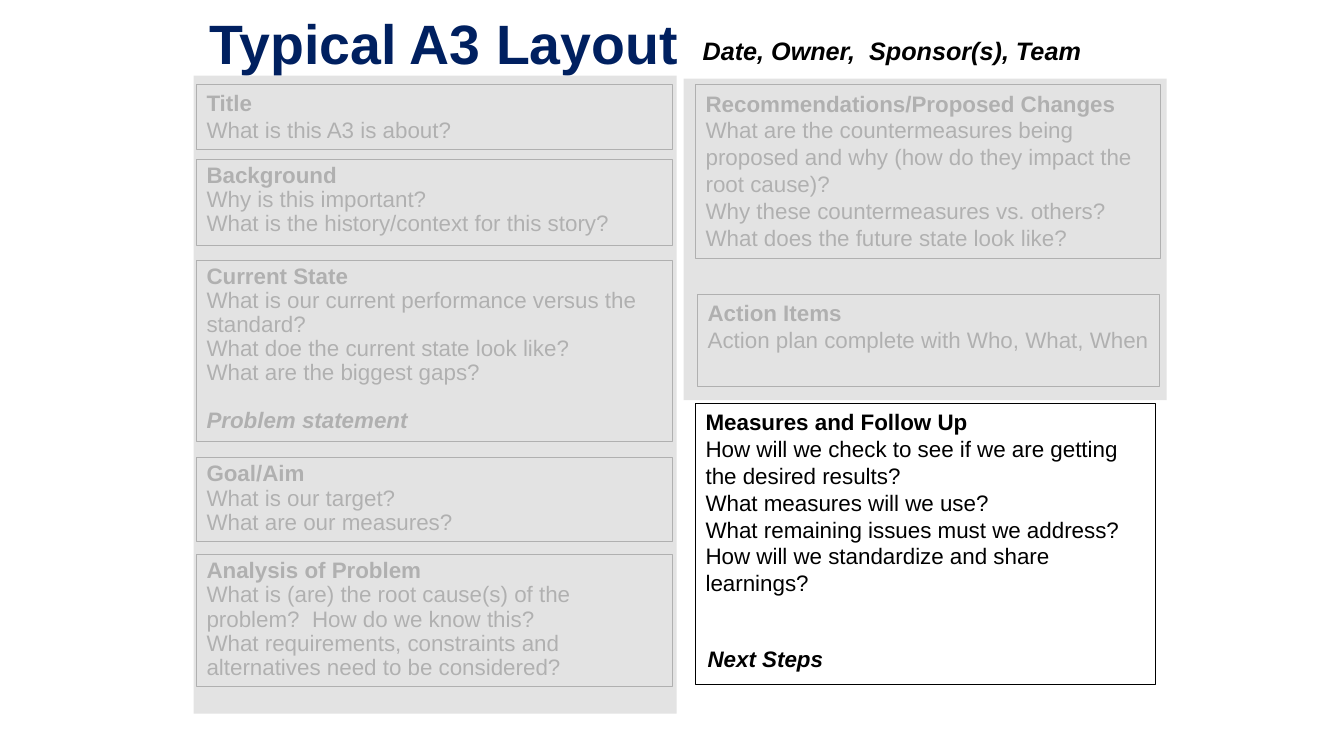
from dataclasses import dataclass

from lxml.etree import SubElement
from pptx import Presentation
from pptx.dml.color import RGBColor
from pptx.enum.shapes import MSO_SHAPE
from pptx.enum.text import MSO_ANCHOR, MSO_AUTO_SIZE, PP_ALIGN
from pptx.oxml.ns import qn
from pptx.shapes.autoshape import Shape
from pptx.slide import Slide
from pptx.text.text import _Paragraph as Paragraph
from pptx.util import Inches, Pt

FONT = "Arial"
BLACK = "000000"
NAVY = "002060"
VEIL_GRAY = "DDDDDD"


@dataclass(frozen=True)
class Area:
    left: float
    top: float
    width: float
    height: float


@dataclass(frozen=True)
class Section:
    area: Area
    heading: str
    questions: tuple[str, ...]
    line_spacing: float = 1.0
    closing: str = ""


LEFT_COLUMN = 1.95
LEFT_WIDTH = 4.72
TIGHT = 0.9

SECTIONS = [
    Section(Area(LEFT_COLUMN, 0.84, LEFT_WIDTH, 0.64), "Title",
            ("What is this A3 is about?",)),
    Section(Area(LEFT_COLUMN, 1.58, LEFT_WIDTH, 0.86), "Background",
            ("Why is this important?",
             "What is the history/context for this story?"), TIGHT),
    Section(Area(LEFT_COLUMN, 2.58, LEFT_WIDTH, 1.8), "Current State",
            ("What is our current performance versus the standard?",
             "What doe the current state look like?",
             "What are the biggest gaps?"), TIGHT, "Problem statement"),
    Section(Area(LEFT_COLUMN, 4.54, LEFT_WIDTH, 0.83), "Goal/Aim",
            ("What is our target?", "What are our measures?"), TIGHT),
    Section(Area(LEFT_COLUMN, 5.5, LEFT_WIDTH, 1.31), "Analysis of Problem",
            ("What is (are) the root cause(s) of the problem?  How do we know this?",
             "What requirements, constraints and alternatives need to be considered?"),
            TIGHT),
    Section(Area(6.9, 0.84, 4.61, 1.72), "Recommendations/Proposed Changes",
            ("What are the countermeasures being proposed and why "
             "(how do they impact the root cause)?",
             "Why these countermeasures vs. others?",
             "What does the future state look like?")),
    Section(Area(6.92, 2.92, 4.58, 0.91), "Action Items",
            ("Action plan complete with Who, What, When",)),
    Section(Area(6.9, 4, 4.56, 2.79), "Measures and Follow Up",
            ("How will we check to see if we are getting the desired results?",
             "What measures will we use?",
             "What remaining issues must we address?",
             "How will we standardize and share learnings?")),
]

VEILS = [Area(6.78, 0.78, 4.79, 3.19), Area(1.92, 0.75, 4.79, 6.33)]


def color(value: str) -> RGBColor:
    return RGBColor.from_string(value)


def inches(area: Area) -> tuple[Inches, Inches, Inches, Inches]:
    return Inches(area.left), Inches(area.top), Inches(area.width), Inches(area.height)


def format_paragraph(para: Paragraph, size: float, bold: bool = False,
                     italic: bool = False, font_color: str = BLACK,
                     line_spacing: float = 1.0) -> None:
    para.alignment = PP_ALIGN.LEFT
    para.line_spacing = line_spacing
    para.font.name = FONT
    para.font.size = Pt(size)
    para.font.bold = bold
    para.font.italic = italic
    para.font.color.rgb = color(font_color)


def add_rectangle(slide: Slide, area: Area) -> Shape:
    box = slide.shapes.add_shape(MSO_SHAPE.RECTANGLE, *inches(area))
    box.shadow.inherit = False
    return box


def add_section(slide: Slide, section: Section) -> None:
    box = add_rectangle(slide, section.area)
    box.fill.background()
    box.line.color.rgb = color(BLACK)
    box.line.width = Pt(0.75)
    frame = box.text_frame
    frame.word_wrap = True
    frame.vertical_anchor = MSO_ANCHOR.TOP
    heading = frame.paragraphs[0]
    heading.text = section.heading
    format_paragraph(heading, 16, bold=True, line_spacing=section.line_spacing)
    for question in section.questions:
        para = frame.add_paragraph()
        para.text = question
        format_paragraph(para, 16, line_spacing=section.line_spacing)
    if section.closing:
        para = frame.add_paragraph()
        para.text = section.closing
        format_paragraph(para, 16, bold=True, italic=True,
                         line_spacing=section.line_spacing)
        para.space_before = Pt(17)


def add_label(slide: Slide, area: Area, text: str, size: float) -> None:
    frame = slide.shapes.add_textbox(*inches(area)).text_frame
    frame.word_wrap = False
    frame.auto_size = MSO_AUTO_SIZE.SHAPE_TO_FIT_TEXT
    para = frame.paragraphs[0]
    para.text = text
    format_paragraph(para, size, bold=True, italic=True)


def add_veil(slide: Slide, area: Area) -> None:
    """Dim the sections below with a see-through gray rectangle."""
    veil = add_rectangle(slide, area)
    veil.fill.solid()
    veil.fill.fore_color.rgb = color(VEIL_GRAY)
    veil.line.fill.background()
    fill_color = veil.element.spPr.find(qn("a:solidFill")).find(qn("a:srgbClr"))
    SubElement(fill_color, qn("a:alpha")).set("val", "80000")


def place_title(slide: Slide) -> None:
    title = slide.shapes.title
    title.left, title.top, title.width, title.height = inches(Area(1.98, 0.09, 9, 0.74))
    frame = title.text_frame
    frame.auto_size = MSO_AUTO_SIZE.NONE
    frame.vertical_anchor = MSO_ANCHOR.MIDDLE
    para = frame.paragraphs[0]
    para.text = "Typical A3 Layout"
    format_paragraph(para, 39.6, bold=True, font_color=NAVY, line_spacing=TIGHT)


def main() -> None:
    deck = Presentation()
    deck.slide_width = Inches(13.33)
    deck.slide_height = Inches(7.5)
    slide = deck.slides.add_slide(deck.slide_layouts.get_by_name("Title Only"))
    place_title(slide)
    for section in SECTIONS:
        add_section(slide, section)
    add_label(slide, Area(6.92, 6.35, 1.36, 0.37), "Next Steps", 16)
    add_label(slide, Area(6.87, 0.3, 3.99, 0.4), "Date, Owner,  Sponsor(s), Team", 18)
    for veil in VEILS:
        add_veil(slide, veil)
    deck.save("out.pptx")


if __name__ == "__main__":
    main()
